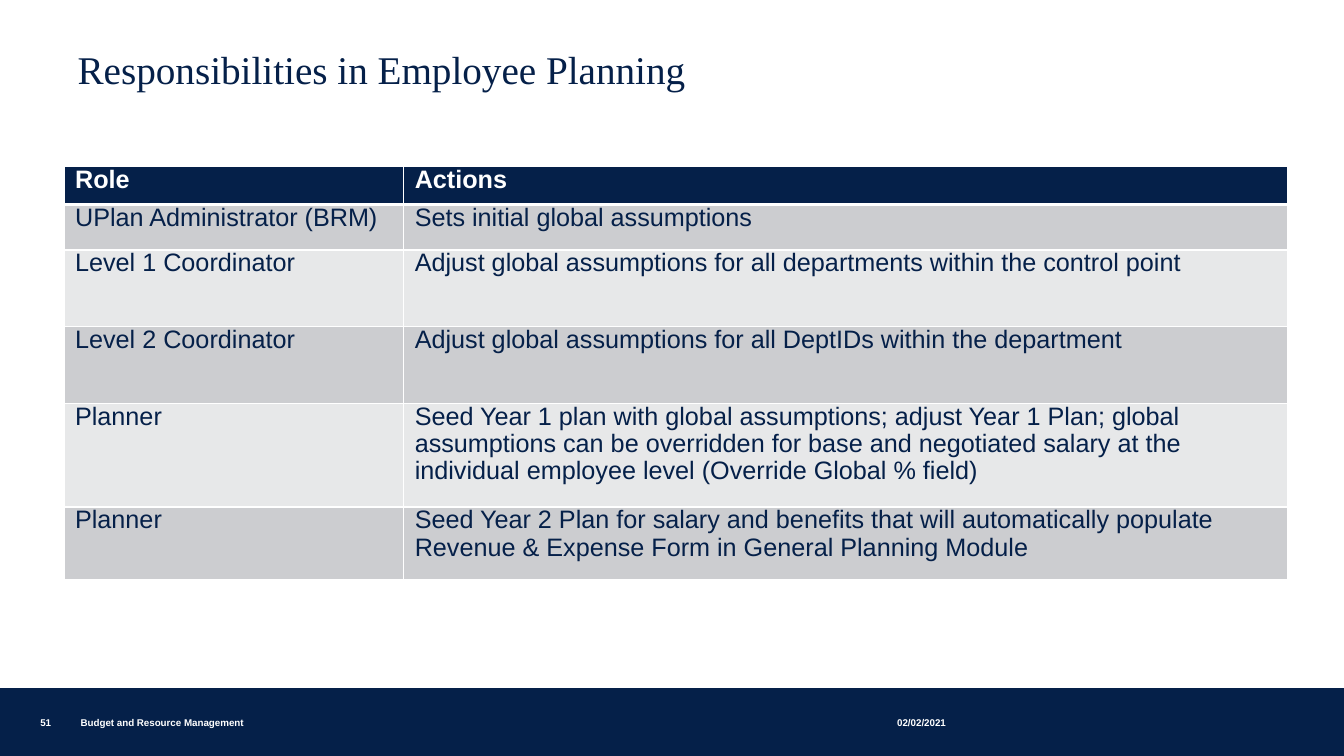
import pptx
import pptx.dml.color
import pptx.enum.shapes
import pptx.enum.text
import pptx.oxml
import pptx.oxml.ns
import pptx.util

NAVY, WHITE, GREY, PALE = "052049", "FFFFFF", "CCCDD0", "E7E8E9"
ANCHOR = pptx.enum.text.MSO_ANCHOR
UNIT = 0.1  # inches in one grid column or row


def color(hex_code):
    return pptx.dml.color.RGBColor.from_string(hex_code)


def grid(*steps):
    return [pptx.util.Inches(step * UNIT) for step in steps]


def write(tf, text, size=18, font="Arial", fill=NAVY, bold=False, spacing=None,
          anchor=ANCHOR.TOP):
    tf.word_wrap = True
    tf.vertical_anchor = anchor
    p = tf.paragraphs[0]
    p.alignment = pptx.enum.text.PP_ALIGN.LEFT
    if spacing:
        p.line_spacing = spacing
    r = p.add_run()
    r.text = text
    r.font.size = pptx.util.Pt(size)
    r.font.name = font
    r.font.bold = bold
    r.font.color.rgb = color(fill)


class Deck:
    def __init__(self):
        self.prs = pptx.Presentation()
        self.prs.slide_width, self.prs.slide_height = grid(133.33, 75)
        self.s = self.prs.slides.add_slide(self.prs.slide_layouts[5])

    def band(self, *box):
        rect = pptx.enum.shapes.MSO_SHAPE.RECTANGLE
        sp = self.s.shapes.add_shape(rect, *grid(*box))
        sp.shadow.inherit = False
        sp.fill.solid()
        sp.fill.fore_color.rgb = color(NAVY)
        sp.line.color.rgb = color(NAVY)
        sp.line.width = pptx.util.Pt(1.5)

    def title(self, text, *box):
        sp = self.s.shapes.title
        sp.left, sp.top, sp.width, sp.height = grid(*box)
        write(sp.text_frame, text, size=28, font="Times New Roman",
              spacing=0.85, anchor=ANCHOR.MIDDLE)

    def label(self, text, *box):
        tf = self.s.shapes.add_textbox(*grid(*box)).text_frame
        tf.margin_left = tf.margin_right = tf.margin_top = tf.margin_bottom = 0
        write(tf, text, size=7, fill=WHITE, bold=True, anchor=ANCHOR.BOTTOM)

    def borders(self, cell, top, bottom):
        tc_pr = cell._tc.get_or_add_tcPr()
        for side, points in (("L", 1), ("R", 1), ("T", top), ("B", bottom)):
            tc_pr.append(pptx.oxml.parse_xml(
                f'<a:ln{side} {pptx.oxml.ns.nsdecls("a")} w="{pptx.util.Pt(points)}">'
                f'<a:solidFill><a:srgbClr val="{WHITE}"/></a:solidFill></a:ln{side}>'))

    def table(self, rows, left, top, widths, heights):
        box = grid(left, top, sum(widths), sum(heights))
        tbl = self.s.shapes.add_table(len(rows), len(widths), *box).table
        for column, width in zip(tbl.columns, grid(*widths)):
            column.width = width
        for i, (texts, height) in enumerate(zip(rows, grid(*heights))):
            tbl.rows[i].height = height
            header = i == 0
            for j, text in enumerate(texts):
                cell = tbl.cell(i, j)
                cell.margin_left = cell.margin_right = pptx.util.Inches(0.11)
                cell.margin_top = cell.margin_bottom = 0
                self.borders(cell, 3 if i == 1 else 1, 3 if header else 1)
                cell.fill.solid()
                cell.fill.fore_color.rgb = color(NAVY if header else GREY if i % 2 else PALE)
                write(cell.text_frame, text, fill=WHITE if header else NAVY,
                      bold=header, spacing=0.97)


ROLES = [
    ("Role", "Actions"),
    ("UPlan Administrator (BRM)", "Sets initial global assumptions"),
    ("Level 1 Coordinator",
     "Adjust global assumptions for all departments within the control point"),
    ("Level 2 Coordinator",
     "Adjust global assumptions for all DeptIDs within the department"),
    ("Planner",
     "Seed Year 1 plan with global assumptions; adjust Year 1 Plan; global assumptions "
     "can be overridden for base and negotiated salary at the individual employee level "
     "(Override Global % field)"),
    ("Planner",
     "Seed Year 2 Plan for salary and benefits that will automatically populate "
     "Revenue & Expense Form in General Planning Module"),
]


def main():
    deck = Deck()
    # Title and table
    deck.title("Responsibilities in Employee Planning", 6.7, 4.7, 118, 5)
    deck.table(ROLES, 6.35, 16.5, (33.7, 87.7), (3.8, 4.5, 7.6, 7.6, 10.3, 7.2))
    # Footer
    deck.band(0, 68.4, 133.33, 6.6)
    deck.label("51", 4, 70.6, 3.6, 1.7)
    deck.label("Budget and Resource Management", 8, 70.6, 62.9, 1.7)
    deck.label("02/02/2021", 89, 70.6, 13.5, 1.7)
    deck.prs.save("out.pptx")


if __name__ == "__main__":
    main()
